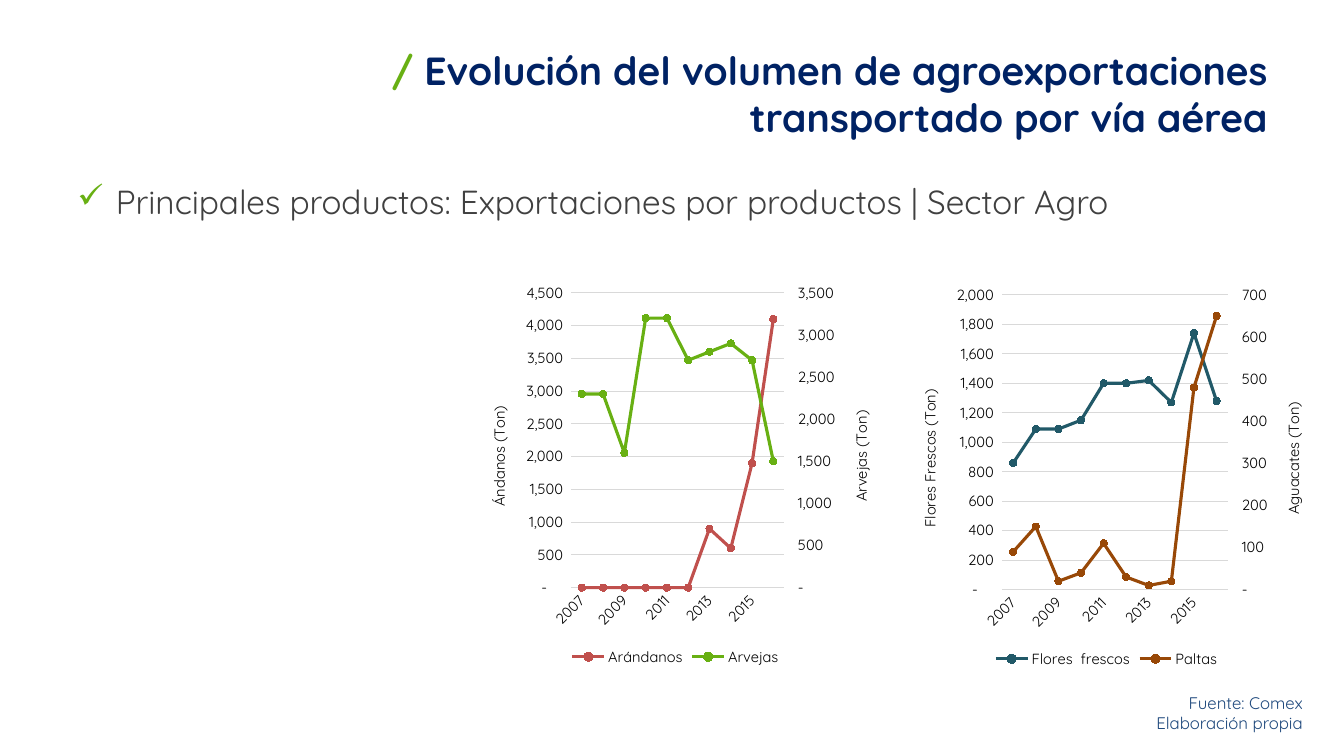
from copy import deepcopy

from lxml import etree
from pptx import Presentation
from pptx.chart.data import CategoryChartData
from pptx.dml.color import RGBColor
from pptx.enum.chart import XL_CHART_TYPE, XL_LEGEND_POSITION, XL_MARKER_STYLE, XL_TICK_MARK
from pptx.enum.text import MSO_ANCHOR, PP_ALIGN
from pptx.oxml import parse_xml
from pptx.oxml.ns import nsdecls, qn
from pptx.util import Inches, Pt

LINE_MARKERS = XL_CHART_TYPE.LINE_MARKERS
LEGEND_BOTTOM = XL_LEGEND_POSITION.BOTTOM
CIRCLE = XL_MARKER_STYLE.CIRCLE
TICK_NONE, TICK_OUT = XL_TICK_MARK.NONE, XL_TICK_MARK.OUTSIDE
TOP, MIDDLE = MSO_ANCHOR.TOP, MSO_ANCHOR.MIDDLE
LEFT, RIGHT = PP_ALIGN.LEFT, PP_ALIGN.RIGHT

YEARS = [str(year) for year in range(2007, 2017)]
TON_FORMAT = '_ * #,##0_ ;_ * \\-#,##0_ ;_ * "-"??_ ;_ '
GREEN, NAVY, GREY, BLUE = "68B013", "002264", "404040", "1F497D"
BLACK, WHITE, GRID = "000000", "FFFFFF", "D9D9D9"


def color(value):
    return RGBColor.from_string(value)


class SlideBuilder:
    """Holds the style and the current slide."""

    font_name = "Quicksand"
    chart_size = 10.5

    def __init__(self, page):
        self.page = page

    def style_font(self, font, size, shade, bold=False):
        font.name = self.font_name
        font.size = Pt(size)
        font.bold = bold
        font.color.rgb = color(shade)

    def text(self, area, lines, size, shade, align=LEFT, anchor=TOP, bold=False):
        box = self.page.shapes.add_textbox(*map(Inches, area))
        frame = box.text_frame
        frame.word_wrap = True
        frame.vertical_anchor = anchor
        frame.text = "\n".join(lines)
        for para in frame.paragraphs:
            para.alignment = align
            for span in para.runs:
                self.style_font(span.font, size, shade, bold)
        return frame

    def check_bullet(self, para, shade):
        props = para._p.get_or_add_pPr()
        props.set("marL", str(Inches(0.38)))
        props.set("indent", str(-Inches(0.38)))
        bullet_color = etree.SubElement(props, qn("a:buClr"))
        etree.SubElement(bullet_color, qn("a:srgbClr"), val=shade)
        etree.SubElement(props, qn("a:buChar"), char="✓")

    def axis_title(self, axis, title):
        frame = axis.axis_title.text_frame
        frame.text = title
        self.style_font(frame.paragraphs[0].runs[0].font, self.chart_size, BLACK)
        body = axis.axis_title._element.find(".//" + qn("a:bodyPr"))
        body.set("rot", "-5400000")
        body.set("vert", "horz")

    def two_axis_chart(self, area, plot_area, series, titles, limits):
        data = CategoryChartData(number_format="#,##0")
        data.categories = YEARS
        for name, values, _ in series:
            data.add_series(name, values)
        chart = self.page.shapes.add_chart(LINE_MARKERS, *map(Inches, area), data).chart
        chart.has_title = False
        self.style_font(chart.font, self.chart_size, BLACK)
        chart.has_legend = True
        chart.legend.position = LEGEND_BOTTOM
        chart.legend.include_in_layout = False
        self.style_font(chart.legend.font, self.chart_size, BLACK)

        # Series
        chart.plots[0].vary_by_categories = False
        for line, (_, _, shade) in zip(chart.plots[0].series, series):
            line.smooth = False
            line.format.line.color.rgb = color(shade)
            line.format.line.width = Pt(2.25)
            line.marker.style = CIRCLE
            line.marker.size = 5
            line.marker.format.fill.solid()
            line.marker.format.fill.fore_color.rgb = color(shade)
            line.marker.format.line.color.rgb = color(shade)

        # Axes
        years, tons = chart.category_axis, chart.value_axis
        for axis in (years, tons):
            axis.major_tick_mark = TICK_NONE
            self.style_font(axis.tick_labels.font, self.chart_size, BLACK)
        years.format.line.color.rgb = color(GRID)
        years.format.line.width = Pt(0.75)
        years._element.find(".//" + qn("a:bodyPr")).set("rot", "-2700000")
        tons.format.line.fill.background()
        tons.major_gridlines.format.line.color.rgb = color(GRID)
        tons.major_gridlines.format.line.width = Pt(0.75)
        tons.tick_labels.number_format = TON_FORMAT
        tons.tick_labels.number_format_is_linked = False
        tons.minimum_scale = 0

        # The right axis starts as a copy of the left one
        self.add_right_axis(chart)
        right = type(tons)(chart._chartSpace.findall(".//" + qn("c:valAx"))[1])
        right.has_major_gridlines = False
        right.major_tick_mark = TICK_OUT
        for axis, title, (top, step) in zip((tons, right), titles, limits):
            self.axis_title(axis, title)
            axis.maximum_scale = top
            axis.major_unit = step
        self.place_plot(chart, plot_area)

    def add_right_axis(self, chart):
        plot = chart._chartSpace.find(".//" + qn("c:lineChart"))
        left_axes = [plot.getparent().find(qn(tag)) for tag in ("c:catAx", "c:valAx")]
        right_plot = deepcopy(plot)
        plot.remove(plot.findall(qn("c:ser"))[1])
        right_plot.remove(right_plot.find(qn("c:ser")))
        plot.addnext(right_plot)
        right_years, right_tons = map(deepcopy, left_axes)
        left_axes[1].addnext(right_tons)
        right_tons.addnext(right_years)
        for reference, number in zip(right_plot.findall(qn("c:axId")), ("501", "502")):
            reference.set("val", number)
        for axis, own, other in ((right_years, "501", "502"), (right_tons, "502", "501")):
            axis.find(qn("c:axId")).set("val", own)
            axis.find(qn("c:crossAx")).set("val", other)
        right_years.find(qn("c:delete")).set("val", "1")
        right_tons.find(qn("c:axPos")).set("val", "r")
        right_tons.find(qn("c:crosses")).set("val", "max")

    def place_plot(self, chart, plot_area):
        plot_parent = chart._chartSpace.find(".//" + qn("c:plotArea"))
        for layout in plot_parent.findall(qn("c:layout")):
            plot_parent.remove(layout)
        layout = etree.Element(qn("c:layout"))
        manual = etree.SubElement(layout, qn("c:manualLayout"))
        settings = [("layoutTarget", "inner"), ("xMode", "edge"), ("yMode", "edge")]
        settings += zip("xywh", map(str, plot_area))
        for tag, value in settings:
            etree.SubElement(manual, qn("c:" + tag), val=value)
        plot_parent.insert(0, layout)
        chart._chartSpace.find(qn("c:chart")).addnext(parse_xml(
            f'<c:spPr {nsdecls("c", "a")}><a:solidFill><a:srgbClr val="{WHITE}"/></a:solidFill>'
            '<a:ln><a:noFill/></a:ln></c:spPr>'))


def main():
    deck = Presentation()
    deck.slide_width, deck.slide_height = Inches(13.33), Inches(7.5)
    page = deck.slides.add_slide(deck.slide_layouts[6])
    builder = SlideBuilder(page)

    # Title with a green slash
    title = builder.text((3.52, 0.3, 9.15, 1.25), ["/"], 28, GREEN, RIGHT, MIDDLE, True)
    span = title.paragraphs[0].add_run()
    span.text = " Evolución del volumen de agroexportaciones transportado por vía aérea"
    builder.style_font(span.font, 28, NAVY, True)

    # Charts
    builder.two_axis_chart(
        (4.63, 2.75, 4.14, 3.9), (0.25, 0.04, 0.51, 0.75),
        [("Arándanos", (0, 0, 0, 0, 0, 0, 900, 600, 1900, 4100), "C0504D"),
         ("Arvejas", (2300, 2300, 1600, 3200, 3200, 2700, 2800, 2900, 2700, 1500), GREEN)],
        ("Ándanos (Ton)", "Arvejas (Ton)"), ((4500, 500), (3500, 500)))
    builder.two_axis_chart(
        (8.9, 2.77, 4.15, 3.9), (0.25, 0.04, 0.54, 0.75),
        [("Flores  frescos", (860, 1090, 1090, 1150, 1400, 1400, 1420, 1270, 1740, 1280), "215968"),
         ("Paltas", (90, 150, 20, 40, 110, 30, 10, 20, 480, 650), "984807")],
        ("Flores Frescos (Ton)", "Aguacates (Ton)"), ((2000, 200), (700, 100)))

    # Subtitle and source
    subtitle = builder.text(
        (0.67, 1.75, 12, 0.74),
        ["Principales productos: Exportaciones por productos | Sector Agro"], 23.8, GREY)
    builder.check_bullet(subtitle.paragraphs[0], GREEN)
    builder.text((10.84, 6.82, 2.18, 0.5), ["Fuente: Comex", "Elaboración propia"],
                 12, BLUE, RIGHT)

    deck.save("out.pptx")


if __name__ == "__main__":
    main()
